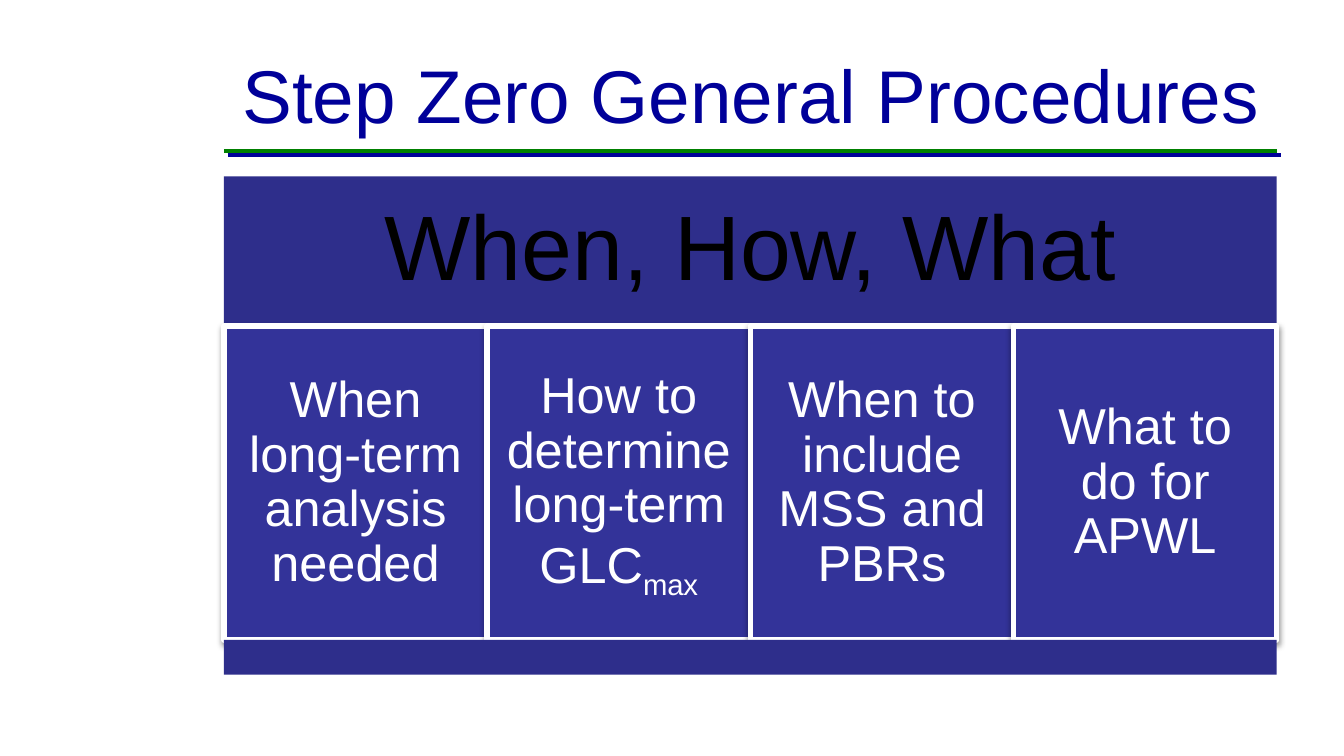
"""Build the slide on when, how and what of the Step Zero general procedures."""
from lxml.etree import SubElement
from pptx import Presentation
from pptx.dml.color import RGBColor
from pptx.enum.shapes import MSO_CONNECTOR, MSO_SHAPE
from pptx.enum.text import MSO_ANCHOR, MSO_AUTO_SIZE, PP_ALIGN
from pptx.oxml.ns import qn
from pptx.util import Pt

PX = 9525
NAVY = RGBColor(0x00, 0x00, 0x99)
GREEN = RGBColor(0x00, 0x80, 0x00)
BAND = RGBColor(0x2E, 0x2E, 0x8B)
INDIGO = RGBColor(0x33, 0x33, 0x99)
BLACK = RGBColor(0x00, 0x00, 0x00)
WHITE = RGBColor(0xFF, 0xFF, 0xFF)
LEFT, WIDTH = 160, 752
COLUMNS = [
    ("When long-term analysis needed", ""),
    ("How to determine long-term GLC", "max"),
    ("When to include MSS and PBRs", ""),
    ("What to do for APWL", ""),
]


def add_text(frame, text, *, size, color, margin, subscript="", spacing=1.0):
    frame.word_wrap = True
    frame.auto_size = MSO_AUTO_SIZE.NONE
    frame.vertical_anchor = MSO_ANCHOR.MIDDLE
    frame.margin_left = frame.margin_right = margin * PX
    frame.margin_top = frame.margin_bottom = margin * PX
    para = frame.paragraphs[0]
    para.alignment = PP_ALIGN.CENTER
    para.line_spacing = spacing
    for part in filter(None, (text, subscript)):
        span = para.add_run()
        span.text = part
        span.font.size = Pt(size)
        span.font.name = "Arial"
        span.font.color.rgb = color
    if subscript:
        span._r.get_or_add_rPr().set("baseline", "-25000")


def add_shadow(parent, *, color, opacity, blur, distance, angle):
    effects = parent.find(qn("a:effectLst"))
    if effects is None:
        effects = SubElement(parent, qn("a:effectLst"))
    shadow = SubElement(
        effects, qn("a:outerShdw"), blurRad=str(Pt(blur)), dist=str(Pt(distance)),
        dir=str(angle * 60000), algn="ctr", rotWithShape="0")
    tint = SubElement(shadow, qn("a:srgbClr"), val=str(color))
    SubElement(tint, qn("a:alpha"), val=str(opacity * 1000))


deck = Presentation()
deck.slide_width, deck.slide_height = 960 * PX, 540 * PX
page = deck.slides.add_slide(deck.slide_layouts[5])

title = page.shapes.title
title.left, title.top, title.width, title.height = (
    length * PX for length in (LEFT, 22, WIDTH, 90))
add_text(title.text_frame, "Step Zero General Procedures",
         size=40, color=NAVY, margin=5)
title_format = title.text_frame.paragraphs[0].runs[0]._r.get_or_add_rPr()
add_shadow(title_format, color=BLACK, opacity=30, blur=3, distance=3, angle=45)
title_format.find(qn("a:solidFill")).addnext(title_format.find(qn("a:effectLst")))

rule = page.shapes.add_connector(
    MSO_CONNECTOR.STRAIGHT, LEFT * PX, 108 * PX, (LEFT + WIDTH) * PX, 108 * PX)
rule.line.color.rgb = GREEN
rule.line.width = Pt(2.25)
add_shadow(rule._element.spPr, color=NAVY, opacity=100, blur=0, distance=2.8, angle=45)

for top, height, heading in ((126, 106, "When, How, What"), (457, 25, "")):
    band = page.shapes.add_shape(
        MSO_SHAPE.RECTANGLE, LEFT * PX, top * PX, WIDTH * PX, height * PX)
    band.shadow.inherit = False
    band.fill.solid()
    band.fill.fore_color.rgb = BAND
    band.line.fill.background()
    if heading:
        add_text(band.text_frame, heading, size=49, color=BLACK, margin=19, spacing=0.9)

column_width = WIDTH // len(COLUMNS)
footer = band._element
for index, (text, subscript) in enumerate(COLUMNS):
    box = page.shapes.add_shape(
        MSO_SHAPE.RECTANGLE, (LEFT + index * column_width) * PX, 233 * PX,
        column_width * PX, 224 * PX)
    box.shadow.inherit = False
    box.fill.solid()
    box.fill.fore_color.rgb = INDIGO
    box.line.color.rgb = WHITE
    box.line.width = Pt(3)
    add_shadow(box._element.spPr, color=BLACK, opacity=38, blur=3.1, distance=1.6, angle=90)
    add_text(box.text_frame, text, size=27, color=WHITE, margin=11,
             subscript=subscript, spacing=0.9)
    footer.addprevious(box._element)

deck.save("out.pptx")
